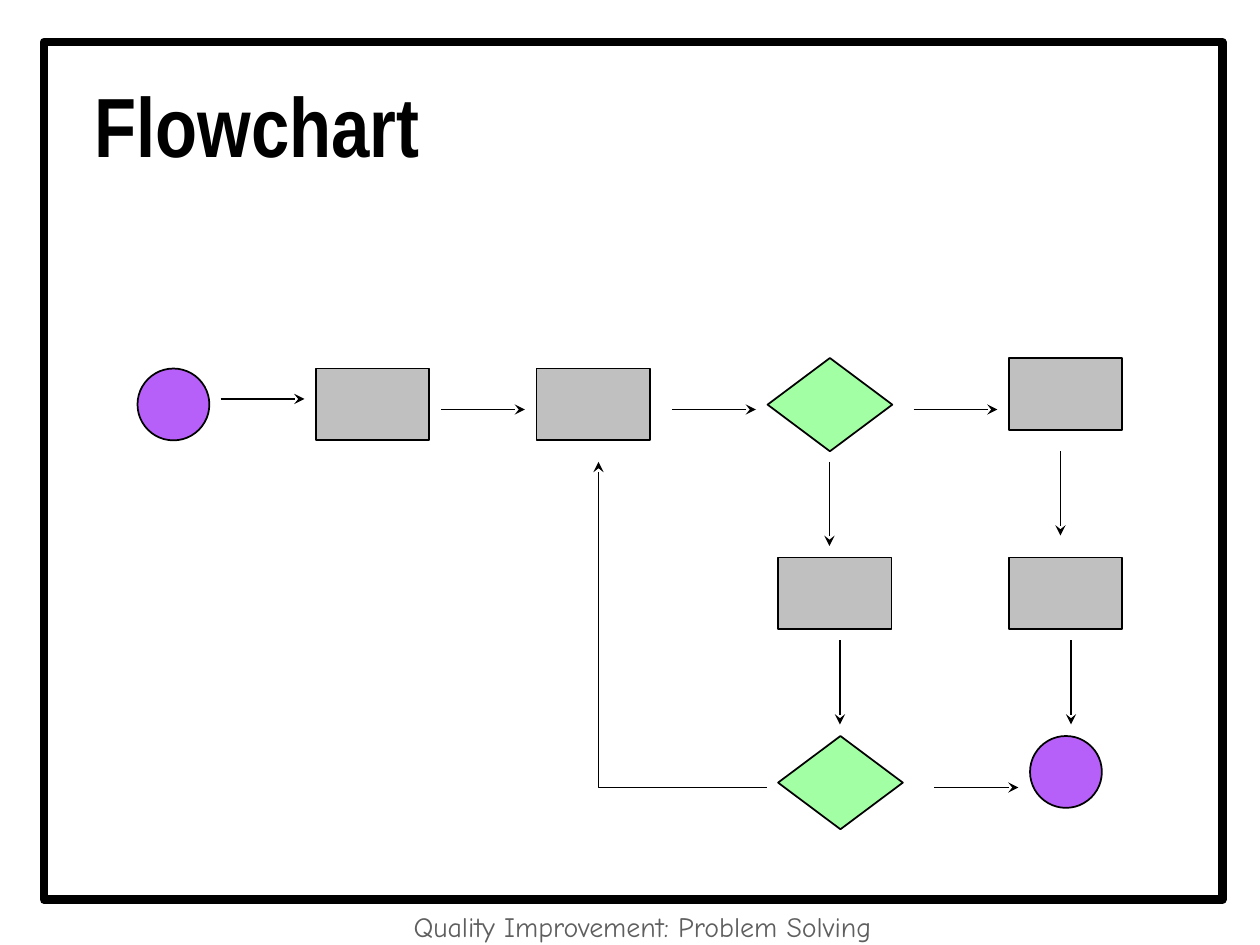
"""Build a flowchart slide with a framed title and a footer line."""
from lxml.etree import SubElement
from pptx import Presentation
from pptx.dml.color import RGBColor
from pptx.enum.shapes import MSO_CONNECTOR, MSO_SHAPE
from pptx.enum.text import MSO_ANCHOR, MSO_AUTO_SIZE, PP_ALIGN
from pptx.oxml.ns import qn
from pptx.util import Emu, Inches, Pt

COLORS = {
    "ink": "000000",
    "terminal": "B760F9",
    "process": "C0C0C0",
    "decision": "A2FFA3",
    "footer": "5F5F5F",
}
KINDS = {
    "terminal": (MSO_SHAPE.OVAL, 6.84, 6.84),
    "process": (MSO_SHAPE.RECTANGLE, 10.8, 6.84),
    "decision": (MSO_SHAPE.DIAMOND, 11.88, 8.88),
}
STEPS = [
    ("terminal", 13, 35),
    ("process", 30, 35),
    ("process", 51, 35),
    ("decision", 73, 34),
    ("process", 96, 34),
    ("process", 96, 53),
    ("process", 74, 53),
    ("terminal", 98, 70),
    ("decision", 74, 70),
]
ARROW_LENGTH = 8
RIGHT_ARROWS = [(21, 38), (42, 39), (64, 39), (87, 39), (89, 75)]
DOWN_ARROWS = [(102, 61), (101, 43), (79, 44), (80, 61)]
RETURN_ROUTE = [(73, 75), (57, 75), (57, 44)]


def cells(*counts):
    """Convert counts of twelfth-inch grid cells to lengths."""
    return [Emu(round(count * Inches(1) / 12)) for count in counts]


def color(key):
    return RGBColor.from_string(COLORS[key])


def write(frame, text, *, font, size, ink="ink", bold=False, align=PP_ALIGN.LEFT,
          spacing=1.0, wrap=True, margin_left=0.1):
    """Put one formatted paragraph into a text frame."""
    frame.auto_size = MSO_AUTO_SIZE.NONE
    frame.word_wrap = wrap
    frame.vertical_anchor = MSO_ANCHOR.MIDDLE
    frame.margin_left = Inches(margin_left)
    paragraph = frame.paragraphs[0]
    paragraph.alignment = align
    paragraph.line_spacing = spacing
    run = paragraph.add_run()
    run.text = text
    run.font.name = font
    run.font.size = Pt(size)
    run.font.bold = bold
    run.font.color.rgb = color(ink)


class FlowchartSlide:
    def __init__(self, deck):
        self.slide = deck.slides.add_slide(deck.slide_layouts[5])
        self.shapes = self.slide.shapes
        self.line_width = 1

    def outline(self, part, width=None):
        part.line.color.rgb = color("ink")
        part.line.width = Pt(width or self.line_width)

    def arrowhead(self, part):
        line = part.element.spPr.find(qn("a:ln"))
        SubElement(line, qn("a:tailEnd"), type="stealth")

    def frame(self, left, top, width, height):
        border = self.shapes.add_shape(MSO_SHAPE.RECTANGLE, *cells(left, top, width, height))
        border.shadow.inherit = False
        border.fill.background()
        self.outline(border, 5)

    def title(self, text, left, top, width, height):
        heading = self.shapes.title
        heading.left, heading.top, heading.width, heading.height = cells(left, top, width, height)
        write(heading.text_frame, text, font="Arial Narrow", size=48, bold=True,
              spacing=0.7, margin_left=0.25)

    def footer(self, text, left, top, width, height):
        caption = self.shapes.add_textbox(*cells(left, top, width, height))
        write(caption.text_frame, text, font="Comic Neue", size=16, ink="footer",
              align=PP_ALIGN.CENTER, wrap=False)

    def step(self, kind, column, row):
        preset, width, height = KINDS[kind]
        symbol = self.shapes.add_shape(preset, *cells(column + 0.1, row + 0.1, width, height))
        symbol.shadow.inherit = False
        symbol.fill.solid()
        symbol.fill.fore_color.rgb = color(kind)
        self.outline(symbol)

    def arrow(self, column, row, across=0, down=0):
        ends = cells(column, row, column + across, row + down)
        flow = self.shapes.add_connector(MSO_CONNECTOR.STRAIGHT, *ends)
        self.outline(flow)
        self.arrowhead(flow)
        SubElement(flow.element.spPr, qn("a:effectLst"))

    def route(self, points):
        start, *corners = [cells(*point) for point in points]
        builder = self.shapes.build_freeform(*start)
        builder.add_line_segments(corners, close=False)
        loop = builder.convert_to_shape()
        loop.shadow.inherit = False
        loop.fill.background()
        self.outline(loop)
        self.arrowhead(loop)


def main():
    deck = Presentation()
    deck.slide_width, deck.slide_height = cells(120, 90)
    flowchart = FlowchartSlide(deck)
    flowchart.frame(4.2, 4, 112.2, 81.7)
    flowchart.footer("Quality Improvement: Problem Solving", 42.2, 86.4, 38, 3.6)
    flowchart.title("Flowchart", 6, 5.5, 91, 15)
    for kind, column, row in STEPS:
        flowchart.step(kind, column, row)
    for column, row in RIGHT_ARROWS:
        flowchart.arrow(column, row, across=ARROW_LENGTH)
    for column, row in DOWN_ARROWS:
        flowchart.arrow(column, row, down=ARROW_LENGTH)
    flowchart.route(RETURN_ROUTE)
    deck.save("out.pptx")


if __name__ == "__main__":
    main()
